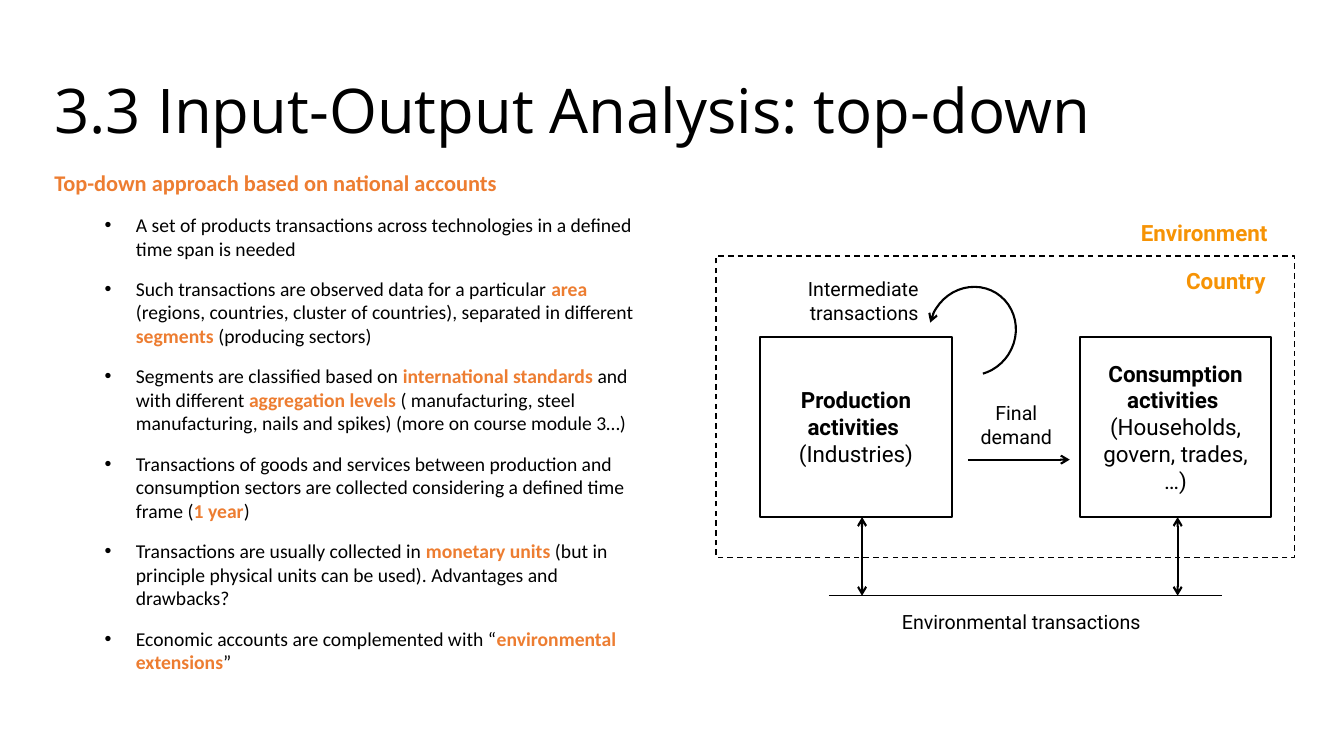
"""Build the slide on top-down input-output analysis."""
from lxml import etree
from pptx import Presentation
from pptx.dml.color import RGBColor
from pptx.enum.dml import MSO_LINE
from pptx.enum.shapes import MSO_CONNECTOR, MSO_SHAPE
from pptx.enum.text import MSO_ANCHOR, PP_ALIGN
from pptx.oxml.ns import qn
from pptx.util import Inches, Pt

LEFT, MID, RIGHT = PP_ALIGN.LEFT, PP_ALIGN.CENTER, PP_ALIGN.RIGHT
TOP, CENTER, BOTTOM = MSO_ANCHOR.TOP, MSO_ANCHOR.MIDDLE, MSO_ANCHOR.BOTTOM
RECT, ARC = MSO_SHAPE.RECTANGLE, MSO_SHAPE.ARC
STRAIGHT, DASH = MSO_CONNECTOR.STRAIGHT, MSO_LINE.DASH

COLORS = {"ink": "000000", "accent": "ED7D31", "label": "F69305"}
TITLE = "3.3 Input-Output Analysis: top-down"
HEADING = "Top-down approach based on national accounts"
# Asterisks enclose the highlighted words.
POINTS = [
    "A set of products transactions across technologies in a defined time span is needed",
    "Such transactions are observed data for a particular *area* (regions, countries, "
    "cluster of countries), separated in different *segments* (producing sectors)",
    "Segments are classified based on *international standards *and with different "
    "*aggregation levels *( manufacturing, steel manufacturing, nails and spikes) "
    "(more on course module 3…)",
    "Transactions of goods and services between production and consumption sectors "
    "are collected considering a defined time frame (*1 year*)",
    "Transactions are usually collected in *monetary units* (but in principle "
    "physical units can be used). Advantages and drawbacks?",
    "Economic accounts are complemented with “*environmental extensions*”",
]
FRAME = (7.1, 2.54, 5.74, 2.99)
BOX_TOP, BOX_W, BOX_H, BASE = 3.34, 1.9, 1.79, 5.91
BOXES = [
    (7.54, 8.55, "Production activities ", "(Industries)"),
    (10.71, 11.68, "Consumption activities ", "(Households, govern, trades, …)"),
]
LABELS = [
    ("Country", (11.33, 2.6, 1.32, 0.37), RIGHT, 16, "label", True),
    ("Environment", (10.77, 2.12, 1.9, 0.37), RIGHT, 16, "label", True),
    ("Intermediate transactions", (7.78, 2.7, 1.43, 0.57), RIGHT, 14, "ink", False),
    ("Final demand", (9.52, 3.93, 1.12, 0.57), MID, 14, "ink", False),
    ("Environmental transactions", (8.64, 6, 2.98, 0.34), MID, 14, "ink", False),
]


def paint(name):
    return RGBColor.from_string(COLORS[name])


def style(para, size, face, color="ink", bold=False, align=LEFT):
    para.alignment = align
    font = para.font
    font.size, font.name, font.bold = Pt(size), face, bold
    font.color.rgb = paint(color)


def text_box(slide, place, anchor=TOP):
    frame = slide.shapes.add_textbox(*map(Inches, place)).text_frame
    frame.word_wrap = True
    frame.vertical_anchor = anchor
    return frame


def outline(slide, kind, place, width, dash=None):
    shape = slide.shapes.add_shape(kind, *map(Inches, place))
    shape.shadow.inherit = False
    shape.fill.background()
    shape.line.color.rgb = paint("ink")
    shape.line.width = Pt(width)
    if dash:
        shape.line.dash_style = dash
    return shape


def add_tips(shape, *ends):
    line = shape.line._get_or_add_ln()
    for end in ends:
        etree.SubElement(line, qn("a:" + end), type="arrow")


def connect(slide, start, stop, width, *ends):
    link = slide.shapes.add_connector(STRAIGHT, *map(Inches, start + stop))
    link.line.color.rgb = paint("ink")
    link.line.width = Pt(width)
    add_tips(link, *ends)
    etree.SubElement(link._element.spPr, qn("a:effectLst"))


def add_point(frame, text):
    para = frame.add_paragraph()
    para.level = 1
    para.space_before = para.space_after = Pt(6)
    props = para._p.get_or_add_pPr()
    props.set("marL", str(Inches(0.81)))
    props.set("indent", str(Inches(-0.31)))
    etree.SubElement(props, qn("a:buFont"), typeface="Arial")
    etree.SubElement(props, qn("a:buChar"), char="•")
    style(para, 14, "Calibri")
    for index, part in enumerate(text.split("*")):
        run = para.add_run()
        run.text = part
        if index % 2:
            run.font.bold = True
            run.font.color.rgb = paint("accent")


def add_notes(slide):
    head = text_box(slide, (0.44, 0.01, 12.13, 1.5), BOTTOM).paragraphs[0]
    head.text = TITLE
    head.line_spacing = 0.9
    style(head, 44, "Open Sans")
    body = text_box(slide, (0.44, 1.63, 6.1, 5.39))
    lead = body.paragraphs[0]
    lead.text = HEADING
    lead.space_after = Pt(6)
    style(lead, 16, "Calibri", "accent", True)
    for point in POINTS:
        add_point(body, point)


def add_chart(slide):
    outline(slide, RECT, FRAME, 1, DASH)
    for left, axis, name, detail in BOXES:
        box = outline(slide, RECT, (left, BOX_TOP, BOX_W, BOX_H), 1.5)
        frame = box.text_frame
        frame.word_wrap = True
        frame.vertical_anchor = CENTER
        frame.text = name + "\n" + detail
        for para, bold in zip(frame.paragraphs, (True, False)):
            style(para, 16, "Roboto", bold=bold, align=MID)
        connect(slide, (axis, BASE), (axis, BOX_TOP + BOX_H), 1.5, "headEnd", "tailEnd")
    loop = outline(slide, ARC, (9.22, 2.84, 0.85, 0.89), 1.5)
    loop.adjustments[0], loop.adjustments[1] = 81.427, 12.265
    loop.rotation = 31.9
    loop._element.spPr.find(qn("a:xfrm")).set("flipH", "1")
    add_tips(loop, "tailEnd")
    connect(slide, (9.6, 4.56), (10.61, 4.56), 1.5, "tailEnd")
    connect(slide, (8.22, BASE), (12.12, BASE), 1)
    for text, place, align, size, color, bold in LABELS:
        para = text_box(slide, place).paragraphs[0]
        para.text = text
        style(para, size, "Roboto", color, bold, align)


def main():
    deck = Presentation()
    deck.slide_width, deck.slide_height = Inches(13.33), Inches(7.5)
    slide = deck.slides.add_slide(deck.slide_layouts[6])
    add_notes(slide)
    add_chart(slide)
    deck.save("out.pptx")


if __name__ == "__main__":
    main()
